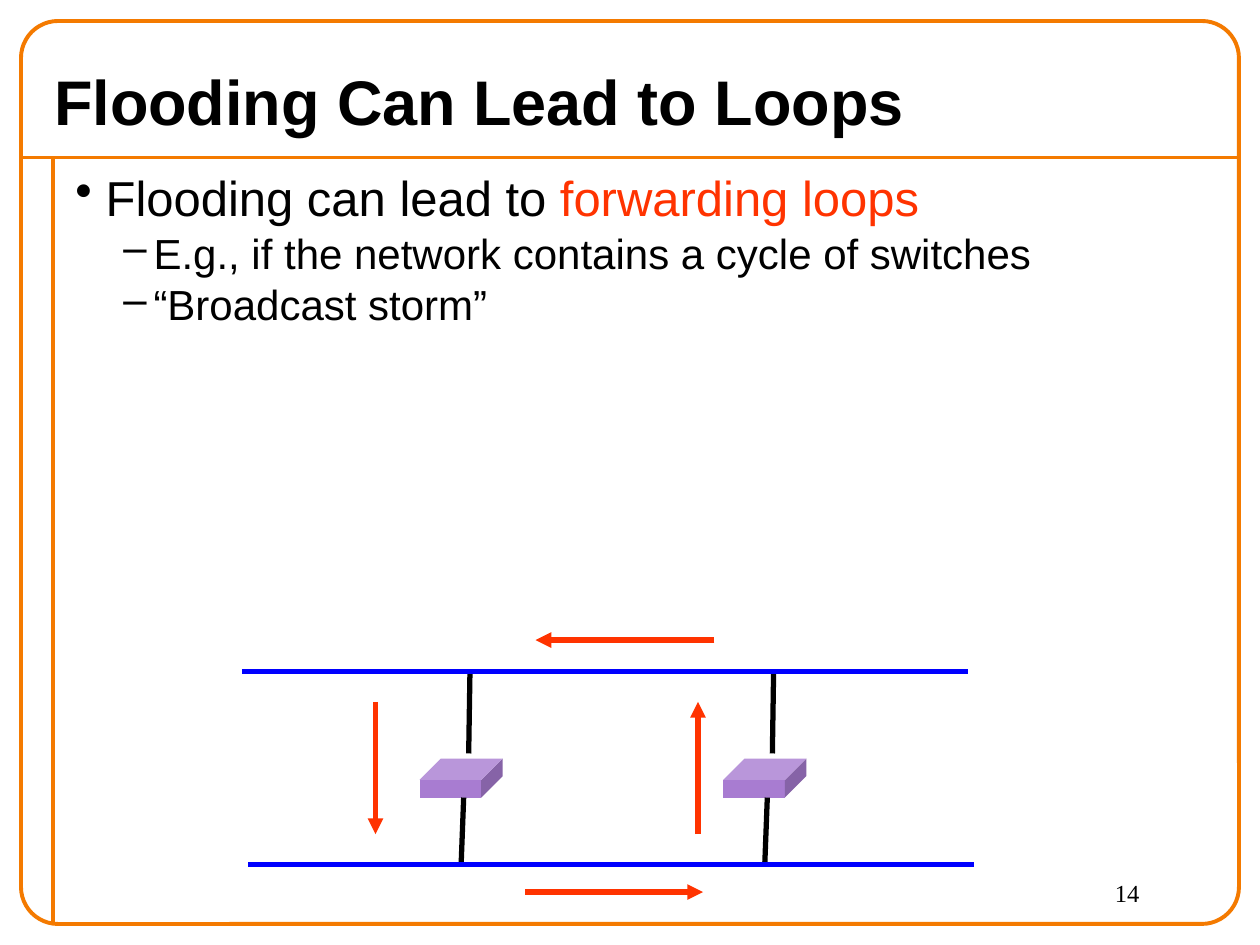
"""Build a slide showing how flooding around a cycle of switches forms a loop."""
from dataclasses import dataclass

from lxml.etree import SubElement
from pptx import Presentation
from pptx.dml.color import RGBColor
from pptx.enum.shapes import MSO_CONNECTOR, MSO_SHAPE
from pptx.enum.text import MSO_ANCHOR, PP_ALIGN
from pptx.oxml.ns import qn
from pptx.util import Inches, Pt


@dataclass(frozen=True)
class Theme:
    """Colours, fonts and type sizes of the slide."""
    ink: str = "000000"
    frame: str = "F47A00"
    accent: str = "FF3300"
    cable: str = "0000FF"
    switch: str = "A87CD1"
    font: str = "Arial"
    number_font: str = "Times New Roman"
    title_size: int = 36
    main_size: int = 28
    sub_size: int = 24
    number_size: int = 14
    frame_width: float = 2.25
    cable_width: float = 3


THEME = Theme()
WIDTH, HEIGHT = 10, 7.5
MARGIN = WIDTH / 60
RULE_TOP, RULE_LEFT = HEIGHT / 6, 0.42

TITLE = "Flooding Can Lead to Loops"
PAGE_NUMBER = "14"
BULLETS = [
    (0, [("Flooding can lead to ", THEME.ink), ("forwarding loops", THEME.accent)]),
    (1, [("E.g., if the network contains a cycle of switches", THEME.ink)]),
    (1, [("“Broadcast storm”", THEME.ink)]),
]
LEVELS = [
    {"mark": "•", "left": 0.24, "size": THEME.main_size, "before": 0},
    {"mark": "–", "left": 0.62, "size": THEME.sub_size, "before": 3.5},
]
HANGING = 0.24

UPPER, LOWER = 5.33, 6.86
CABLES = [(1.92, UPPER), (1.97, LOWER)]
CABLE_LENGTH = 5.76
SWITCH_LEFT, SWITCH_STEP, SWITCH_COUNT = 3.33, 2.41, 2
SWITCH_TOP, SWITCH_SIZE, SWITCH_DEPTH = 6.02, (0.66, 0.31), 0.17
LINKS = [((0.4, UPPER), (0.39, 5.98)), ((0.35, 6.33), (0.33, LOWER))]
FLOWS = [
    ((2.98, 5.57), (2.98, 6.62)),
    ((4.17, 7.08), (5.58, 7.08)),
    ((5.54, 6.62), (5.54, 5.57)),
    ((5.67, 5.08), (4.25, 5.08)),
]


def colour(value):
    return RGBColor.from_string(value)


def write(paragraph, text, *, size, ink=THEME.ink, font=THEME.font, bold=False):
    run = paragraph.add_run()
    run.text = text
    run.font.size, run.font.name, run.font.bold = Pt(size), font, bold
    run.font.color.rgb = colour(ink)


def place(shape, left, top, width, height):
    shape.left, shape.top = Inches(left), Inches(top)
    shape.width, shape.height = Inches(width), Inches(height)


def add_text_frame(slide, *box):
    frame = slide.shapes.add_textbox(*map(Inches, box)).text_frame
    frame.word_wrap = True
    return frame


def add_line(slide, start, end, ink, width, arrow=False):
    line = slide.shapes.add_connector(
        MSO_CONNECTOR.STRAIGHT, *map(Inches, (*start, *end)))
    line.line.color.rgb, line.line.width = colour(ink), Pt(width)
    if arrow:
        SubElement(line.line._get_or_add_ln(), qn("a:tailEnd"), type="triangle")
    SubElement(line._element.spPr, qn("a:effectLst"))


def add_shape(slide, kind, box, adjustment):
    shape = slide.shapes.add_shape(kind, *map(Inches, box))
    shape.shadow.inherit = False
    shape.adjustments[0] = adjustment
    return shape


def add_frame(slide):
    for start, end in [
        ((MARGIN, RULE_TOP), (WIDTH - MARGIN, RULE_TOP)),
        ((RULE_LEFT, RULE_TOP), (RULE_LEFT, HEIGHT - MARGIN)),
    ]:
        add_line(slide, start, end, THEME.frame, THEME.frame_width)
    box = (MARGIN, MARGIN, WIDTH - 2 * MARGIN, HEIGHT - 2 * MARGIN)
    border = add_shape(slide, MSO_SHAPE.ROUNDED_RECTANGLE, box, 0.041)
    border.fill.background()
    border.line.color.rgb = colour(THEME.frame)
    border.line.width = Pt(THEME.frame_width)


def add_title(slide):
    title = slide.shapes.title
    place(title, 0.33, 0.42, 9.42, 0.75)
    title.text_frame.vertical_anchor = MSO_ANCHOR.MIDDLE
    paragraph = title.text_frame.paragraphs[0]
    paragraph.alignment = PP_ALIGN.LEFT
    write(paragraph, TITLE, size=THEME.title_size, bold=True)


def add_bullets(slide):
    frame = add_text_frame(slide, 0.5, 1.33, 9.25, 3.58)
    for index, (level, parts) in enumerate(BULLETS):
        style = LEVELS[level]
        paragraph = frame.add_paragraph() if index else frame.paragraphs[0]
        paragraph.level = level
        paragraph.line_spacing = 0.9
        paragraph.space_before = Pt(style["before"])
        properties = paragraph._p.get_or_add_pPr()
        properties.set("marL", str(Inches(style["left"])))
        properties.set("indent", str(-Inches(HANGING)))
        SubElement(properties, qn("a:buChar"), char=style["mark"])
        for text, ink in parts:
            write(paragraph, text, size=style["size"], ink=ink)


def add_network(slide):
    for index in range(SWITCH_COUNT):
        left = SWITCH_LEFT + index * SWITCH_STEP
        switch = add_shape(slide, MSO_SHAPE.CUBE, (left, SWITCH_TOP, *SWITCH_SIZE),
                           SWITCH_DEPTH / min(SWITCH_SIZE))
        switch.fill.solid()
        switch.fill.fore_color.rgb = colour(THEME.switch)
        switch.line.fill.background()
        for (start, top), (end, bottom) in LINKS:
            add_line(slide, (left + start, top), (left + end, bottom),
                     THEME.ink, THEME.cable_width)
    for left, top in CABLES:
        add_line(slide, (left, top), (left + CABLE_LENGTH, top),
                 THEME.cable, THEME.cable_width)
    for start, end in FLOWS:
        add_line(slide, start, end, THEME.accent, THEME.cable_width, arrow=True)


def main():
    presentation = Presentation()
    presentation.slide_width, presentation.slide_height = Inches(WIDTH), Inches(HEIGHT)
    slide = presentation.slides.add_slide(presentation.slide_layouts.get_by_name("Title Only"))
    add_frame(slide)
    add_title(slide)
    add_bullets(slide)
    number = add_text_frame(slide, 8.75, 6.92, 1, 0.42)
    write(number.paragraphs[0], PAGE_NUMBER, size=THEME.number_size, font=THEME.number_font)
    add_network(slide)
    presentation.save("out.pptx")


if __name__ == "__main__":
    main()
